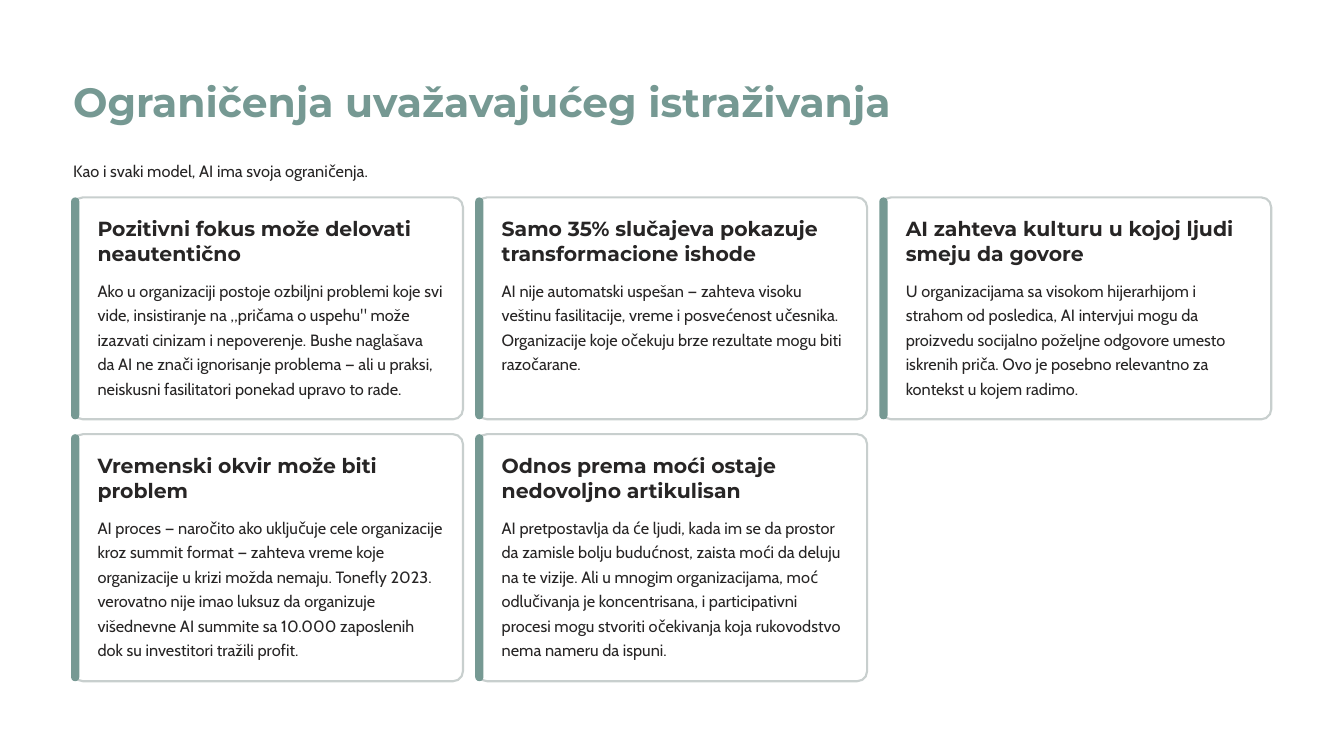
from dataclasses import dataclass

from lxml import etree
from pptx import Presentation
from pptx.dml.color import RGBColor
from pptx.enum import shapes as kinds, text as txt
from pptx.oxml import ns
from pptx.util import Cm, Pt

GREEN, GREY, DARK, WHITE = "769993", "C8CFCE", "272525", "FFFFFF"
LEFT, PITCH, WIDTH = 2.21, 12.22, 11.79
RADIUS = 0.3


@dataclass
class Style:
    font: str
    size: float
    lead: float
    color: str
    bold: bool = False


@dataclass
class Row:
    top: float
    height: float


@dataclass
class Card:
    col: int
    row: Row
    head: str
    body: str


TITLE = Style("Montserrat", 35, 43.5, GREEN, True)
HEAD = Style("Montserrat", 17.5, 21.5, DARK, True)
BODY = Style("Cabin", 14, 21, DARK)

UPPER, LOWER = Row(5.97, 6.71), Row(13.13, 7.47)
CARDS = [
    Card(0, UPPER, "Pozitivni fokus može delovati neautentično",
         "Ako u organizaciji postoje ozbiljni problemi koje svi vide, insistiranje "
         "na „pričama o uspehu\" može izazvati cinizam i nepoverenje. Bushe naglašava "
         "da AI ne znači ignorisanje problema — ali u praksi, neiskusni fasilitatori "
         "ponekad upravo to rade."),
    Card(1, UPPER, "Samo 35% slučajeva pokazuje transformacione ishode",
         "AI nije automatski uspešan — zahteva visoku veštinu fasilitacije, vreme i "
         "posvećenost učesnika. Organizacije koje očekuju brze rezultate mogu biti "
         "razočarane."),
    Card(2, UPPER, "AI zahteva kulturu u kojoj ljudi smeju da govore",
         "U organizacijama sa visokom hijerarhijom i strahom od posledica, AI intervjui "
         "mogu da proizvedu socijalno poželjne odgovore umesto iskrenih priča. Ovo je "
         "posebno relevantno za kontekst u kojem radimo."),
    Card(0, LOWER, "Vremenski okvir može biti problem",
         "AI proces — naročito ako uključuje cele organizacije kroz summit format — "
         "zahteva vreme koje organizacije u krizi možda nemaju. Tonefly 2023. verovatno "
         "nije imao luksuz da organizuje višednevne AI summite sa 10.000 zaposlenih dok "
         "su investitori tražili profit."),
    Card(1, LOWER, "Odnos prema moći ostaje nedovoljno artikulisan",
         "AI pretpostavlja da će ljudi, kada im se da prostor da zamisle bolju "
         "budućnost, zaista moći da deluju na te vizije. Ali u mnogim organizacijama, "
         "moć odlučivanja je koncentrisana, i participativni procesi mogu stvoriti "
         "očekivanja koja rukovodstvo nema nameru da ispuni."),
]


def rgb(code: str) -> RGBColor:
    return RGBColor.from_string(code)


def place(shape, x: float, y: float, w: float, h: float) -> None:
    shape.left, shape.top, shape.width, shape.height = Cm(x), Cm(y), Cm(w), Cm(h)


def write(shape, words: str, style: Style, wrap: bool = True) -> None:
    frame = shape.text_frame
    frame.margin_left = frame.margin_right = 0
    frame.margin_top = frame.margin_bottom = 0
    frame.auto_size = txt.MSO_AUTO_SIZE.NONE
    frame.vertical_anchor = txt.MSO_ANCHOR.TOP
    frame.word_wrap = wrap
    par = frame.paragraphs[0]
    par.alignment = txt.PP_ALIGN.LEFT
    par.line_spacing = Pt(style.lead)
    par.space_before = Pt(0)
    run = par.add_run()
    run.text = words
    font = run.font
    font.name, font.size, font.bold = style.font, Pt(style.size), style.bold
    font.color.rgb = rgb(style.color)


def unbullet(shape) -> None:
    props = shape.text_frame.paragraphs[0]._p.get_or_add_pPr()
    props.set("marL", "0")
    props.set("indent", "0")
    etree.SubElement(props, ns.qn("a:buNone"))


def add_round(slide, x: float, y: float, w: float, h: float, fill: str, bend: float):
    shape = slide.shapes.add_shape(
        kinds.MSO_SHAPE.ROUNDED_RECTANGLE, Cm(x), Cm(y), Cm(w), Cm(h))
    shape.adjustments[0] = bend
    shape.shadow.inherit = False
    shape.fill.solid()
    shape.fill.fore_color.rgb = rgb(fill)
    shape.line.fill.background()
    return shape


def add_text(slide, x: float, y: float, w: float, h: float,
             words: str, style: Style) -> None:
    write(slide.shapes.add_textbox(Cm(x), Cm(y), Cm(w), Cm(h)), words, style)


def add_card(slide, card: Card) -> None:
    x, y, h = LEFT + card.col * PITCH, card.row.top, card.row.height
    frame = add_round(slide, x, y, WIDTH, h, WHITE, RADIUS / h)
    frame.line.color.rgb = rgb(GREY)
    frame.line.width = Pt(1.8)
    add_round(slide, x - 0.06, y, 0.25, h, GREEN, 0.5)
    add_text(slide, x + 0.74, y + 0.56, 10.46, 1.55, card.head, HEAD)
    add_text(slide, x + 0.74, y + 2.38, 10.46, h - 2.95, card.body, BODY)


def main() -> None:
    deck = Presentation()
    deck.slide_width, deck.slide_height = Cm(40.64), Cm(22.86)
    slide = deck.slides.add_slide(deck.slide_layouts[1])

    title, intro = slide.placeholders
    place(title, LEFT, 2.26, 24.82, 1.55)
    write(title, "Ograničenja uvažavajućeg istraživanja", TITLE, wrap=False)
    place(intro, LEFT, 4.72, 36.22, 0.76)
    unbullet(intro)
    write(intro, "Kao i svaki model, AI ima svoja ograničenja.", BODY, wrap=False)

    for card in CARDS:
        add_card(slide, card)
    deck.save("out.pptx")


if __name__ == "__main__":
    main()
